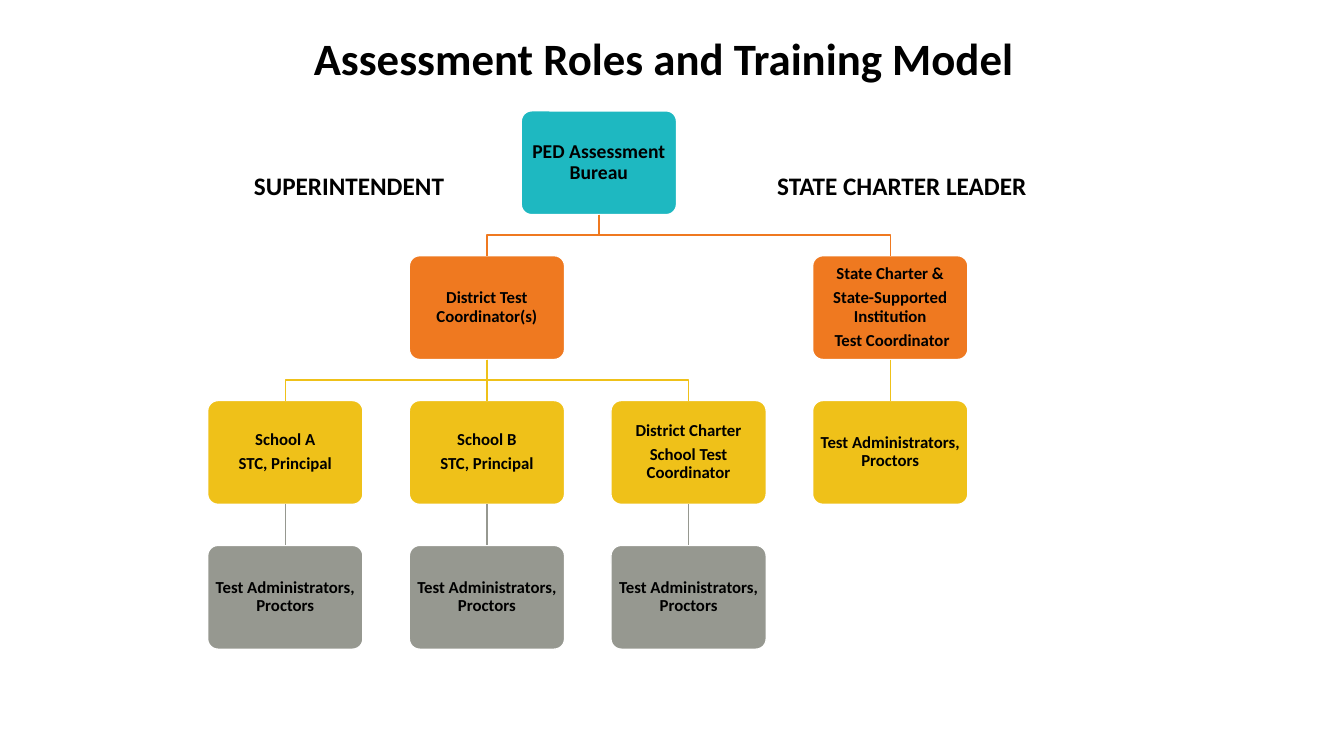
from lxml import etree
from pptx import Presentation
from pptx import util as u
from pptx.dml.color import RGBColor
from pptx.enum import shapes, text
from pptx.oxml.ns import qn

TEAL, ORANGE, YELLOW, GRAY = "1EB8C1", "EF7920", "EFC119", "969890"
BOX_WIDTH, BOX_HEIGHT = 1.54, 1.03
FIRST_LEFT, COLUMN_STEP = 2.06, 2
FIRST_TOP, ROW_STEP = 1.1, 1.437


def color(target, value):
    """Color a font, or make a fill solid and color it."""
    if hasattr(target, "solid"):
        target.solid()
        target = target.fore_color
    else:
        target = target.color
    target.rgb = RGBColor.from_string(value)


def write(shape, lines, size, align=text.PP_ALIGN.CENTER,
          anchor=text.MSO_ANCHOR.MIDDLE, spacing=1, after=0, margins=(0.1, 0.05)):
    frame = shape.text_frame
    frame.word_wrap = True
    frame.auto_size = text.MSO_AUTO_SIZE.NONE
    frame.vertical_anchor = anchor
    frame.margin_left = frame.margin_right = u.Inches(margins[0])
    frame.margin_top = frame.margin_bottom = u.Inches(margins[1])
    for index, line in enumerate(lines):
        para = frame.add_paragraph() if index else frame.paragraphs[0]
        para.alignment = align
        para.line_spacing = spacing
        para.space_before = u.Pt(0)
        para.space_after = u.Pt(after)
        span = para.add_run()
        span.text = line
        span.font.name = "Calibri"
        span.font.size = u.Pt(size)
        span.font.bold = True
        color(span.font, "000000")


deck = Presentation()
deck.slide_width, deck.slide_height = u.Inches(13.33), u.Inches(7.5)
page = deck.slides.add_slide(deck.slide_layouts[5])

title = page.shapes.title
title.left, title.top = u.Inches(2.42), u.Inches(0.25)
title.width, title.height = u.Inches(8.33), u.Inches(0.64)
write(title, ["Assessment Roles and Training Model"], 32)

# Each role: key, parent, column, row, color, lines
staff = ["Test Administrators, Proctors"]
roles = [
    ("bureau", None, 1.555, 0, TEAL, ["PED Assessment Bureau"]),
    ("district", "bureau", 1, 1, ORANGE, ["District Test Coordinator(s)"]),
    ("state", "bureau", 3, 1, ORANGE,
     ["State Charter &", "State-Supported Institution", " Test Coordinator"]),
    ("school a", "district", 0, 2, YELLOW, ["School A", "STC, Principal"]),
    ("school b", "district", 1, 2, YELLOW, ["School B", "STC, Principal"]),
    ("charter", "district", 2, 2, YELLOW,
     ["District Charter", "School Test Coordinator"]),
    ("state staff", "state", 3, 2, YELLOW, staff),
    ("staff a", "school a", 0, 3, GRAY, staff),
    ("staff b", "school b", 1, 3, GRAY, staff),
    ("charter staff", "charter", 2, 3, GRAY, staff),
]

boxes = {}
for key, parent, column, row, fill, lines in roles:
    box = page.shapes.add_shape(
        shapes.MSO_SHAPE.ROUNDED_RECTANGLE,
        u.Inches(FIRST_LEFT + column * COLUMN_STEP),
        u.Inches(FIRST_TOP + row * ROW_STEP),
        u.Inches(BOX_WIDTH), u.Inches(BOX_HEIGHT))
    box.adjustments[0] = 0.1
    box.shadow.inherit = False
    color(box.fill, fill)
    color(box.line.fill, "FFFFFF")
    box.line.width = u.Pt(1)
    write(box, lines, 12 if parent else 14, spacing=0.9, after=4.2,
          margins=(0.04, 0.05))
    boxes[key] = box
    if parent is None:
        continue

    above = boxes[parent]
    start_x, start_y = above.left + above.width // 2, above.top + above.height
    end_x, end_y = box.left + box.width // 2, box.top
    if start_x == end_x:
        link = page.shapes.add_connector(
            shapes.MSO_CONNECTOR.STRAIGHT, start_x, start_y, end_x, end_y)
        link.begin_connect(above, 2)
        link.end_connect(box, 0)
        etree.SubElement(link._element.spPr, qn("a:effectLst"))
    else:
        middle_y = (start_y + end_y) // 2
        path = page.shapes.build_freeform(start_x, start_y)
        path.add_line_segments(
            [(start_x, middle_y), (end_x, middle_y), (end_x, end_y)], close=False)
        link = path.convert_to_shape()
        link.fill.background()
        link.shadow.inherit = False
    color(link.line.fill, fill)
    link.line.width = u.Pt(1)

for label, left, width in [("SUPERINTENDENT", 2.42, 2.39),
                           ("STATE CHARTER LEADER", 7.61, 2.78)]:
    box = page.shapes.add_textbox(
        u.Inches(left), u.Inches(1.64), u.Inches(width), u.Inches(0.4))
    write(box, [label], 18, align=text.PP_ALIGN.LEFT, anchor=text.MSO_ANCHOR.TOP)

deck.save("out.pptx")
